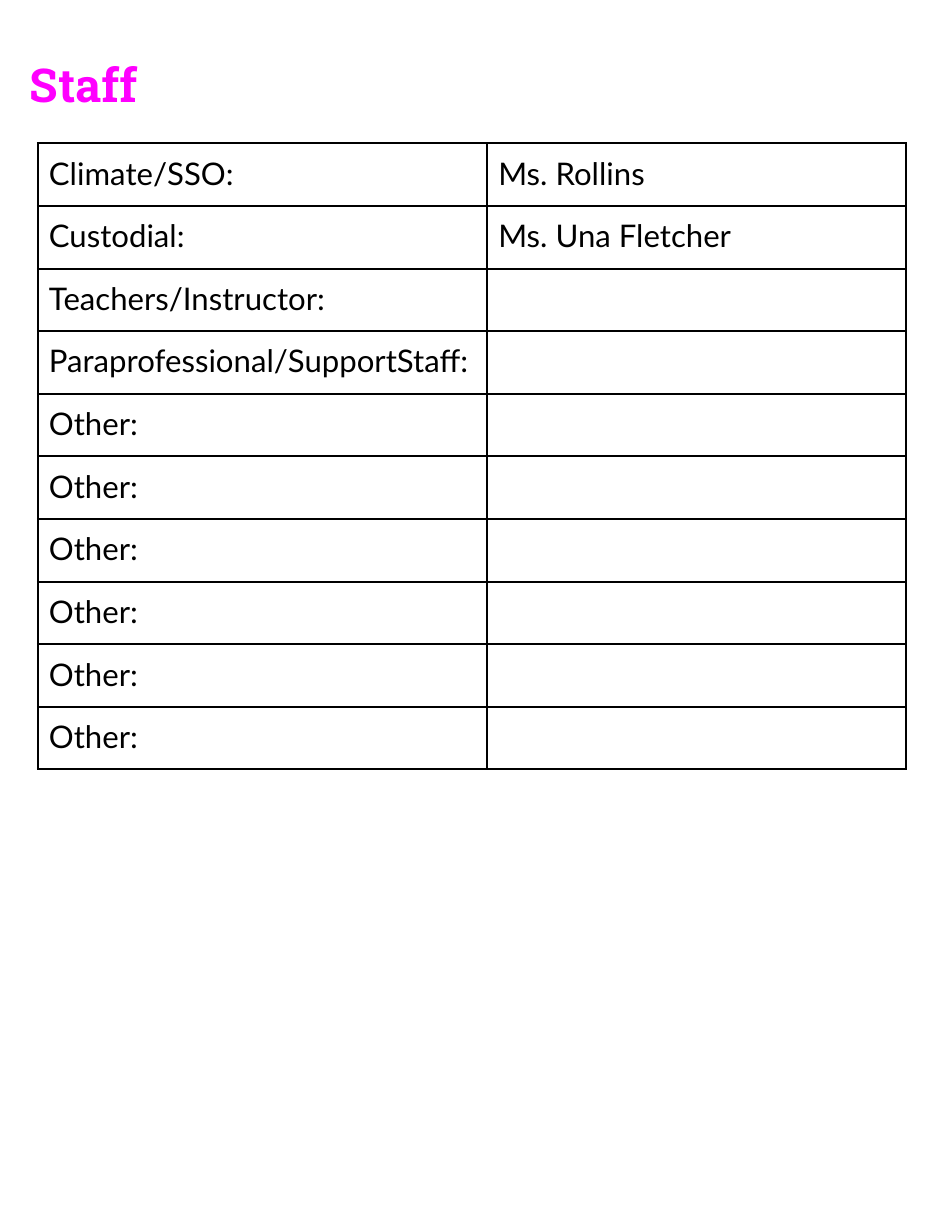
import pptx
import pptx.dml.color
import pptx.enum.text
import pptx.oxml
import pptx.oxml.ns
import pptx.util
from pptx.util import Cm

STAFF = [
    ("Climate/SSO:", "Ms. Rollins"),
    ("Custodial:", "Ms. Una Fletcher"),
    ("Teachers/Instructor:", ""),
    ("Paraprofessional/SupportStaff:", ""),
] + [("Other:", "")] * 6


def colour(code):
    return pptx.dml.color.RGBColor.from_string(code)


def write_text(frame, text, font="Lato", size=20, ink="000000", bold=False):
    paragraph = frame.paragraphs[0]
    paragraph.alignment = pptx.enum.text.PP_ALIGN.LEFT
    paragraph.font.size = pptx.util.Pt(size)
    if not text:
        return
    span = paragraph.add_run()
    span.text = text
    span.font.name = font
    span.font.size = pptx.util.Pt(size)
    span.font.bold = bold
    span.font.color.rgb = colour(ink)


class StaffPage:
    accent = "FF00FF"
    line_ink = "000000"
    line_width = pptx.util.Pt(1.5)
    margin = Cm(0.25)

    def __init__(self, deck):
        self.page = deck.slides.add_slide(deck.slide_layouts[5])

    def set_margins(self, item):
        item.margin_left = item.margin_right = self.margin
        item.margin_top = item.margin_bottom = self.margin

    def title(self, text, left, top, width, height):
        box = self.page.shapes.title
        box.left, box.top, box.width, box.height = left, top, width, height
        frame = box.text_frame
        frame.word_wrap = True
        frame.auto_size = pptx.enum.text.MSO_AUTO_SIZE.NONE
        frame.vertical_anchor = pptx.enum.text.MSO_ANCHOR.TOP
        self.set_margins(frame)
        write_text(frame, text, font="Roboto Slab", size=30,
                   ink=self.accent, bold=True)

    def border(self, cell):
        properties = cell._tc.get_or_add_tcPr()
        # Border lines come before the fill in the cell properties
        for position, side in enumerate(("lnL", "lnR", "lnT", "lnB")):
            line = pptx.oxml.parse_xml(
                f'<a:{side} {pptx.oxml.ns.nsdecls("a")} w="{self.line_width}">'
                f'<a:solidFill><a:srgbClr val="{self.line_ink}"/></a:solidFill>'
                f'</a:{side}>')
            properties.insert(position, line)

    def table(self, rows, left, top, widths, row_height):
        table = self.page.shapes.add_table(
            len(rows), len(widths), left, top,
            sum(widths), row_height * len(rows)).table
        table.first_row = table.horz_banding = False
        for column, width in zip(table.columns, widths):
            column.width = width
        for row, texts in zip(table.rows, rows):
            row.height = row_height
            for cell, text in zip(row.cells, texts):
                self.set_margins(cell)
                cell.fill.background()
                self.border(cell)
                write_text(cell.text_frame, text)


def main():
    deck = pptx.Presentation()
    deck.slide_width, deck.slide_height = Cm(21.59), Cm(27.94)
    staff_page = StaffPage(deck)

    # Heading
    staff_page.title("Staff", Cm(0.43), Cm(1.02), Cm(20.12), Cm(3.1))

    # Roles and names
    staff_page.table(STAFF, Cm(0.86), Cm(3.25),
                     [Cm(10.19), Cm(9.5)], Cm(1.42))

    deck.save("out.pptx")


if __name__ == "__main__":
    main()
